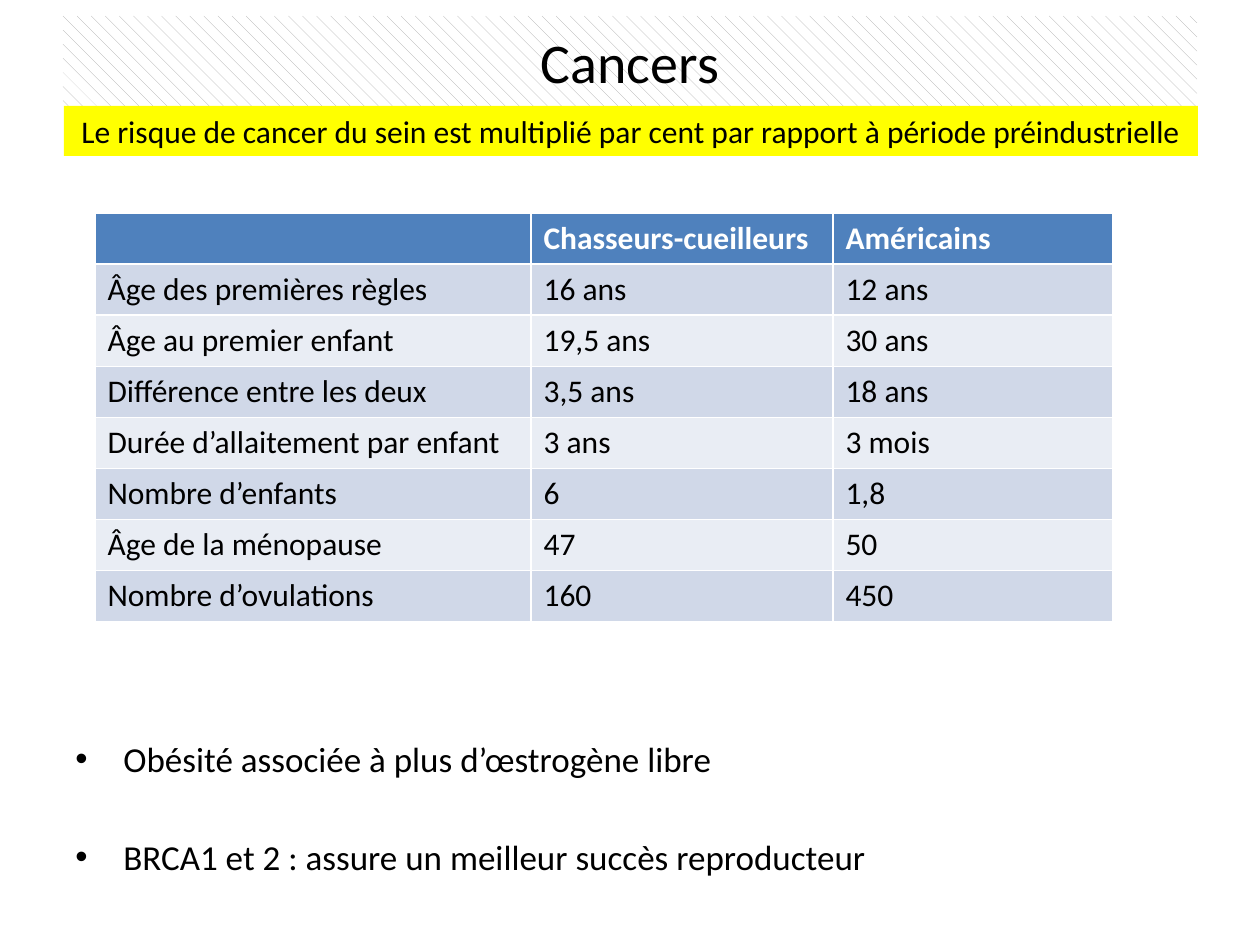
from lxml import etree
from pptx import Presentation
from pptx.dml.color import RGBColor
from pptx.enum.dml import MSO_PATTERN
from pptx.enum.shapes import MSO_SHAPE
from pptx.enum.text import MSO_ANCHOR, PP_ALIGN
from pptx.oxml.ns import qn
from pptx.util import Emu, Pt

SHINGLE = MSO_PATTERN.SHINGLE
RECT = MSO_SHAPE.RECTANGLE
MIDDLE = MSO_ANCHOR.MIDDLE
CENTER, LEFT = PP_ALIGN.CENTER, PP_ALIGN.LEFT

BLACK = RGBColor(0x00, 0x00, 0x00)
WHITE = RGBColor(0xFF, 0xFF, 0xFF)
GRAY = RGBColor(0xA6, 0xA6, 0xA6)
YELLOW = RGBColor(0xFF, 0xFF, 0x00)
BLUE = RGBColor(0x4F, 0x81, 0xBD)
BANDS = RGBColor(0xE9, 0xED, 0xF4), RGBColor(0xD0, 0xD8, 0xE8)

FONT = "Calibri"
DPI = 126
INDENT = 48
COLS = 436, 302, 280
ROW = 51

ROWS = [
    ("", "Chasseurs-cueilleurs", "Américains"),
    ("Âge des premières règles", "16 ans", "12 ans"),
    ("Âge au premier enfant", "19,5 ans", "30 ans"),
    ("Différence entre les deux", "3,5 ans", "18 ans"),
    ("Durée d’allaitement par enfant", "3 ans", "3 mois"),
    ("Nombre d’enfants", "6", "1,8"),
    ("Âge de la ménopause", "47", "50"),
    ("Nombre d’ovulations", "160", "450"),
]
POINTS = [
    "Obésité associée à plus d’œstrogène libre",
    "BRCA1 et 2 : assure un meilleur succès reproducteur",
]


def px(n):
    return Emu(round(n * 914400 / DPI))


def style(para, size, color=BLACK, bold=False, align=LEFT):
    font = para.font
    font.name, font.size, font.bold = FONT, Pt(size), bold
    font.color.rgb = color
    para.alignment = align


def add_title(slide, text, x, y, w, h):
    title = slide.shapes.title
    title.left, title.top, title.width, title.height = map(px, (x, y, w, h))
    title.fill.patterned()
    title.fill.pattern = SHINGLE
    title.fill.fore_color.rgb = GRAY
    title.fill.back_color.rgb = WHITE
    title.text_frame.text = text
    title.text_frame.vertical_anchor = MIDDLE
    style(title.text_frame.paragraphs[0], 32, align=CENTER)


def add_banner(slide, text, x, y, w, h):
    bar = slide.shapes.add_shape(RECT, *map(px, (x, y, w, h)))
    bar.shadow.inherit = False
    bar.fill.solid()
    bar.fill.fore_color.rgb = YELLOW
    bar.line.fill.background()
    frame = bar.text_frame
    frame.word_wrap = True
    frame.vertical_anchor = MIDDLE
    frame.text = text
    style(frame.paragraphs[0], 18, align=CENTER)


def add_grid(slide, rows, x, y):
    size = map(px, (x, y, sum(COLS), ROW * len(rows)))
    table = slide.shapes.add_table(len(rows), len(COLS), *size).table
    for col, width in zip(table.columns, COLS):
        col.width = px(width)
    for r, row in enumerate(rows):
        table.rows[r].height = px(ROW)
        head = r == 0
        for c, text in enumerate(row):
            cell = table.cell(r, c)
            cell.fill.solid()
            cell.fill.fore_color.rgb = BLUE if head else BANDS[r % 2]
            cell.text = text
            style(cell.text_frame.paragraphs[0], 18,
                  WHITE if head else BLACK, head)


def add_bullets(slide, lines, x, y, w, h):
    frame = slide.shapes.add_textbox(*map(px, (x, y, w, h))).text_frame
    frame.word_wrap = True
    for i, text in enumerate(lines):
        para = frame.add_paragraph() if i else frame.paragraphs[0]
        para.text = text
        para.space_before = Pt(32 if i else 0)
        style(para, 20)
        # Hanging bullet
        props = para._p.get_or_add_pPr()
        props.set("marL", str(px(INDENT)))
        props.set("indent", str(-px(INDENT)))
        font = etree.Element(qn("a:buFont"), typeface="Arial")
        mark = etree.Element(qn("a:buChar"), char="•")
        at = props.index(props.find(qn("a:defRPr")))
        props[at:at] = [font, mark]


def main():
    deck = Presentation()
    deck.slide_width, deck.slide_height = px(1260), px(945)
    slide = deck.slides.add_slide(deck.slide_layouts[5])

    # Heading
    add_title(slide, "Cancers", 63, 16, 1134, 90)
    add_banner(slide, "Le risque de cancer du sein est multiplié par cent "
               "par rapport à période préindustrielle", 64, 106, 1134, 50)

    # Comparison and remarks
    add_grid(slide, ROWS, 95, 213)
    add_bullets(slide, POINTS, 63, 731, 1134, 169)

    deck.save("out.pptx")


if __name__ == "__main__":
    main()
